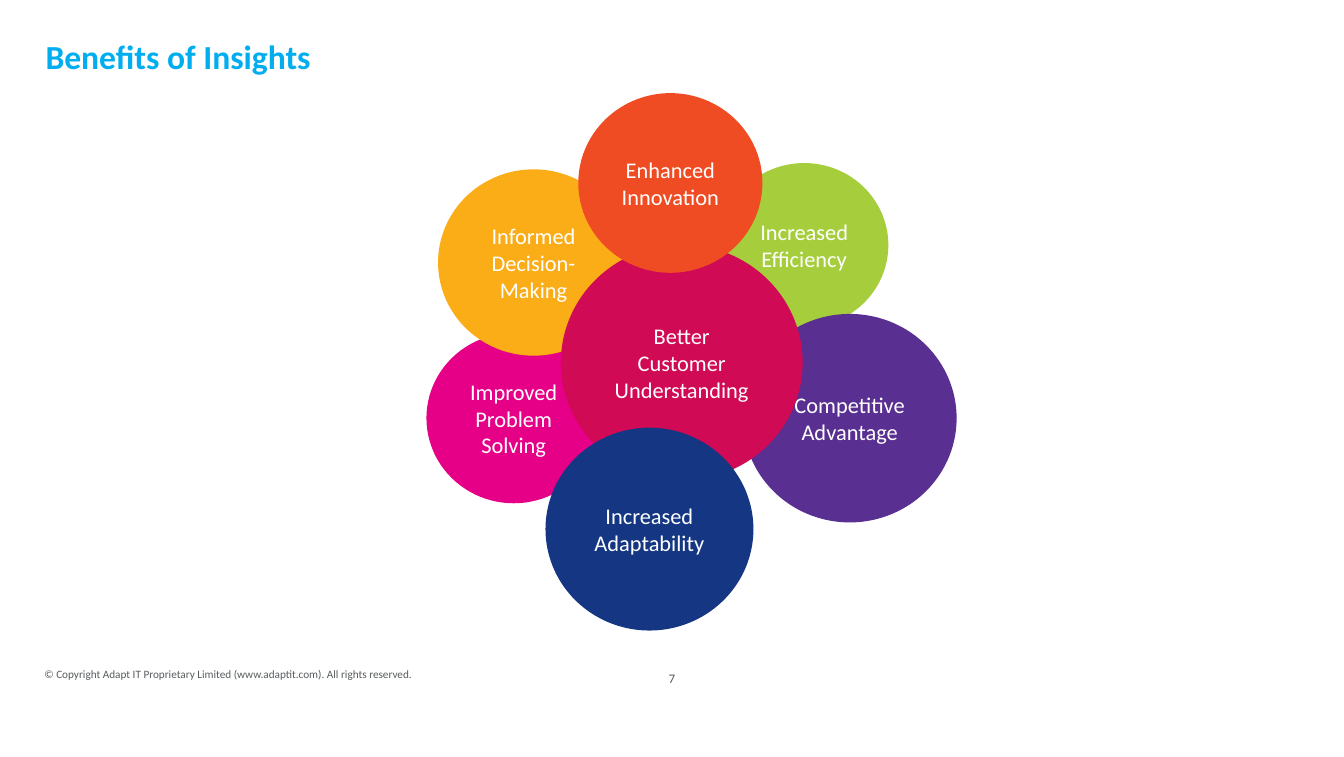
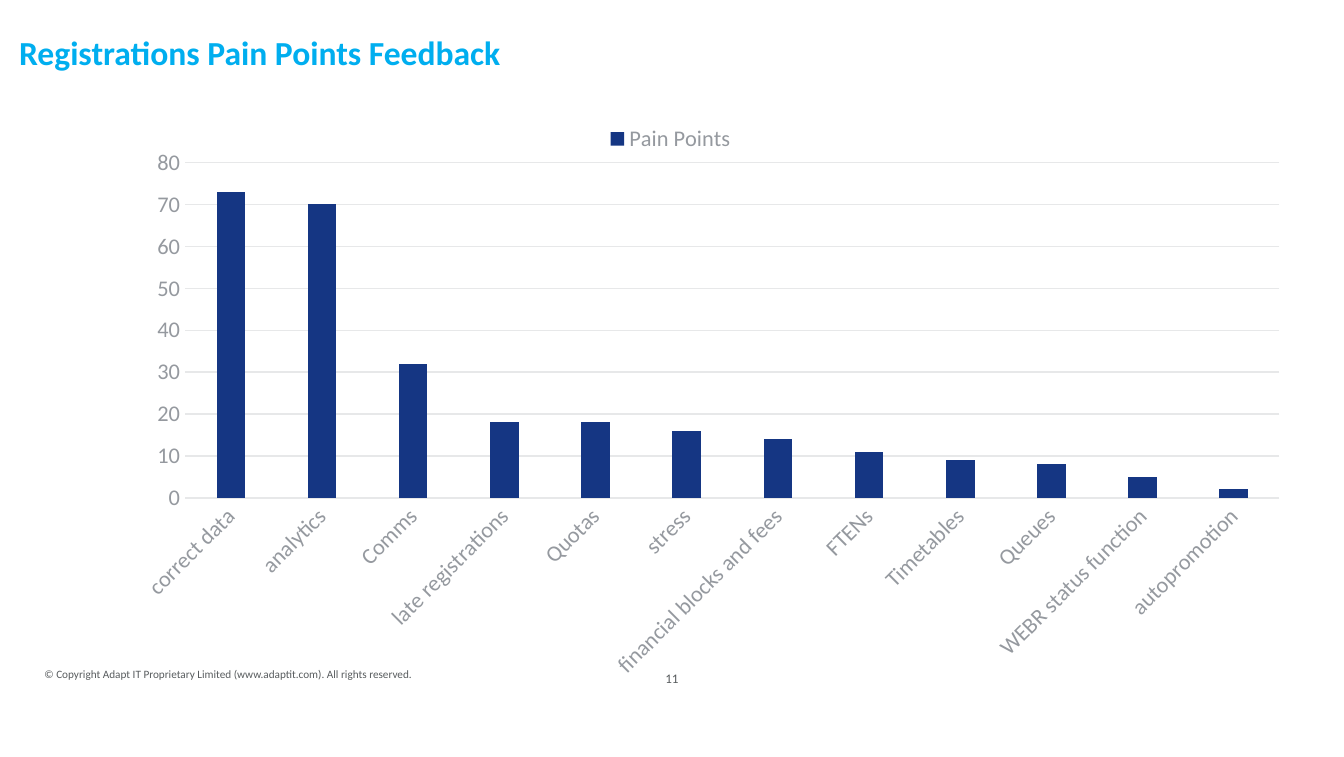
from lxml import etree
from pptx import Presentation
from pptx.chart.data import CategoryChartData
from pptx.dml.color import RGBColor
from pptx.enum.chart import XL_CHART_TYPE, XL_LEGEND_POSITION, XL_TICK_MARK
from pptx.enum.shapes import MSO_SHAPE
from pptx.enum.text import MSO_ANCHOR, PP_ALIGN
from pptx.oxml.ns import qn
from pptx.util import Cm, Pt

ELLIPSE = MSO_SHAPE.OVAL
COLUMNS = XL_CHART_TYPE.COLUMN_CLUSTERED
LEGEND_BOTTOM = XL_LEGEND_POSITION.BOTTOM
NO_TICK = XL_TICK_MARK.NONE
MIDDLE = MSO_ANCHOR.MIDDLE
LEFT, CENTER = PP_ALIGN.LEFT, PP_ALIGN.CENTER

FONT = "Calibri"
COLORS = {
    "title": "00AEEF", "footer": "585C5E", "white": "FFFFFF",
    "chart": "5F6369", "label": "95999F", "grid": "E7E8E9",
    "pink": "E60088", "amber": "FBAD18", "green": "A6CE3C",
    "purple": "5A2F92", "crimson": "D00A54", "navy": "153683",
    "orange": "F04C23",
}
COPYRIGHT = ("© Copyright Adapt IT Proprietary Limited (www.adaptit.com). "
             "All rights reserved.")

BENEFITS = [
    ("Improved Problem Solving", "pink", 8.06, 6.29, 3.3),
    ("Informed Decision-Making", "amber", 8.28, 3.2, 3.61),
    ("Increased Efficiency", "green", 13.61, 3.08, 3.18),
    ("Competitive Advantage", "purple", 14.04, 5.93, 4.04),
    ("Better Customer Understanding", "crimson", 10.6, 4.62, 4.57),
    ("Increased Adaptability", "navy", 10.31, 8.08, 3.93),
    ("Enhanced Innovation", "orange", 10.93, 1.76, 3.48),
]
HEIGHT_TO_WIDTH = 0.975

PAIN_POINTS = [
    ("correct data", 73), ("analytics", 70), ("Comms", 32),
    ("late registrations", 18), ("Quotas", 18), ("stress", 16),
    ("financial blocks and fees", 14), ("FTENs", 11), ("Timetables", 9),
    ("Queues", 8), ("WEBR status function", 5), ("autopromotion", 2),
]


def rgb(name):
    return RGBColor.from_string(COLORS[name])


def style_font(font, size, color, bold=False):
    font.name = FONT
    font.size = Pt(size)
    font.bold = bold
    font.color.rgb = rgb(color)


def write(shape, text, size, color, align=LEFT, bold=False):
    frame = shape.text_frame
    frame.text = text
    frame.vertical_anchor = MIDDLE
    para = frame.paragraphs[0]
    para.alignment = align
    style_font(para.runs[0].font, size, color, bold)
    return frame


def remove_insets(frame):
    frame.margin_left = frame.margin_top = 0
    frame.margin_right = frame.margin_bottom = 0


def add_footer(page, text, left, width, height, size, align):
    box = page.shapes.add_textbox(Cm(left), Cm(12.15), Cm(width), Cm(height))
    frame = write(box, text, size, "footer", align)
    frame.word_wrap = False
    remove_insets(frame)


def add_page(deck, title, number, left, top, width):
    page = deck.slides.add_slide(deck.slide_layouts[5])
    add_footer(page, COPYRIGHT, 0.84, 8.76, 1.17, 6, LEFT)
    add_footer(page, number, 10.95, 3.5, 1.32, 7, CENTER)
    heading = page.shapes.title
    heading.left, heading.top = Cm(left), Cm(top)
    heading.width, heading.height = Cm(width), Cm(1.35)
    frame = write(heading, title, 18, "title", bold=True)
    frame.paragraphs[0].line_spacing = Pt(22.6)
    remove_insets(frame)
    return page


def add_benefits(page):
    for text, color, left, top, width in BENEFITS:
        circle = page.shapes.add_shape(
            ELLIPSE, Cm(left), Cm(top), Cm(width), Cm(width * HEIGHT_TO_WIDTH))
        circle.shadow.inherit = False
        circle.fill.solid()
        circle.fill.fore_color.rgb = rgb(color)
        circle.line.fill.background()
        write(circle, text, 12, "white", CENTER)


def place(element, index, x, y, w, h, inner=False):
    for old in element.findall(qn("c:layout")):
        element.remove(old)
    layout = etree.Element(qn("c:layout"))
    manual = etree.SubElement(layout, qn("c:manualLayout"))
    settings = [("layoutTarget", "inner")] if inner else []
    settings += [("xMode", "edge"), ("yMode", "edge"),
                 ("x", x), ("y", y), ("w", w), ("h", h)]
    for tag, value in settings:
        etree.SubElement(manual, qn("c:" + tag)).set("val", str(value))
    element.insert(index, layout)


def add_pain_points(page):
    names, counts = zip(*PAIN_POINTS)
    data = CategoryChartData()
    data.categories = names
    data.add_series("Pain Points", counts)
    chart = page.shapes.add_chart(
        COLUMNS, Cm(1.12), Cm(1.97), Cm(23.34), Cm(10.92), data).chart
    chart.has_title = False
    style_font(chart.font, 10, "chart")

    plot = chart.plots[0]
    plot.gap_width, plot.overlap = 219, -27
    plot.vary_by_categories = False
    bars = plot.series[0].format.fill
    bars.solid()
    bars.fore_color.rgb = rgb("navy")

    categories, values = chart.category_axis, chart.value_axis
    for axis in (categories, values):
        axis.major_tick_mark = axis.minor_tick_mark = NO_TICK
        style_font(axis.tick_labels.font, 12, "label")
    values.minimum_scale, values.maximum_scale, values.major_unit = 0, 80, 10
    values.has_major_gridlines = True
    values.format.line.fill.background()
    for line in (categories.format.line, values.major_gridlines.format.line):
        line.color.rgb = rgb("grid")
        line.width = Pt(0.75)
    label_body = categories._element.find(qn("c:txPr")).find(qn("a:bodyPr"))
    label_body.set("rot", "-2700000")
    label_body.set("vert", "horz")

    chart.has_legend = True
    legend = chart.legend
    legend.position = LEGEND_BOTTOM
    legend.include_in_layout = False
    style_font(legend.font, 12, "label")
    place(legend._element, 1, 0.43, 0.03, 0.13, 0.06)
    place(chart._chartSpace.chart.plotArea, 0, 0.102, 0.101, 0.886, 0.58, inner=True)


def main():
    deck = Presentation()
    deck.slide_width, deck.slide_height = Cm(25.4), Cm(14.3)
    add_benefits(add_page(deck, "Benefits of Insights", "7", 0.86, 0.37, 23.52))
    add_pain_points(add_page(
        deck, "Registrations Pain Points Feedback", "11", 0.36, 0.29, 24.1))
    deck.save("out.pptx")


if __name__ == "__main__":
    main()
